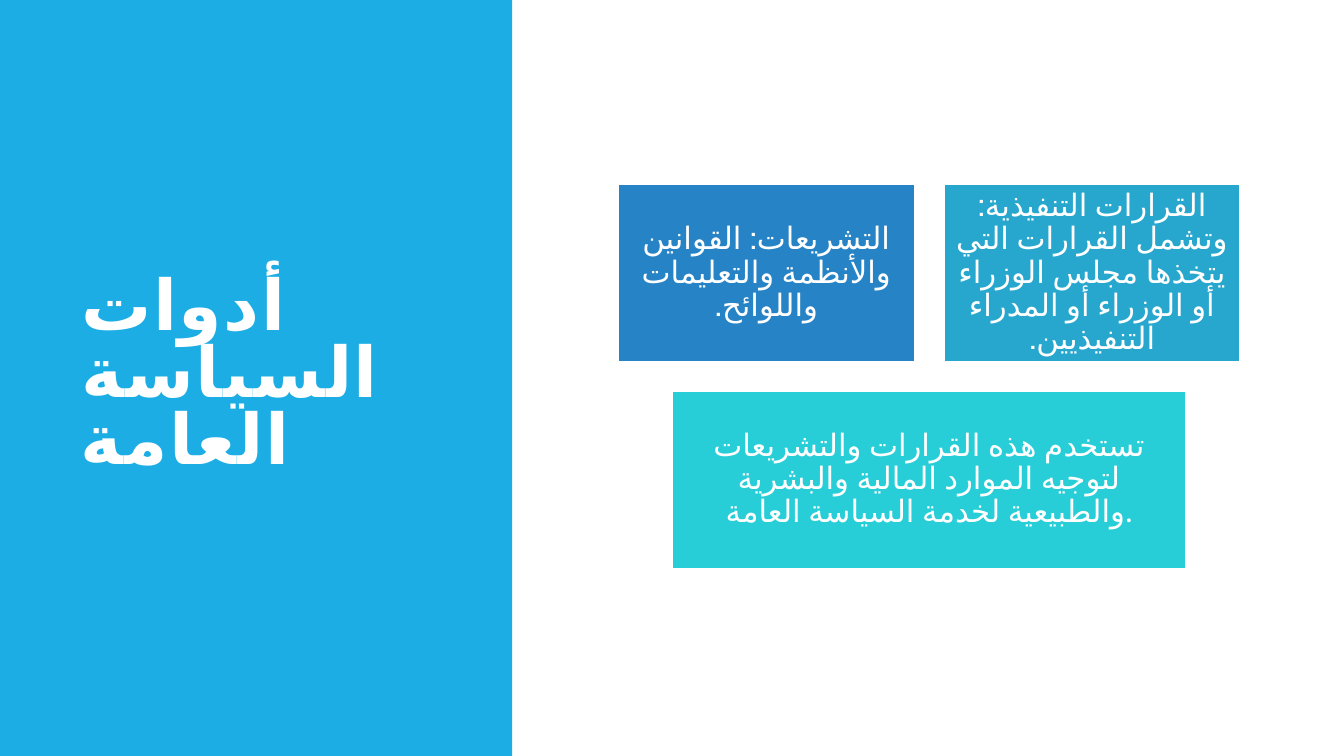
"""Build the slide on the tools of public policy."""
from pptx import Presentation
from pptx import util as u
from pptx.dml.color import RGBColor
from pptx.enum import lang, shapes, text

COLOURS = {"panel": "1CADE4", "legislation": "2683C6", "decisions": "27A7CE",
           "purpose": "27CED7", "white": "FFFFFF"}
FONT = "Lato"


def add_block(slide, left, top, width, height, colour):
    block = slide.shapes.add_shape(
        shapes.MSO_SHAPE.RECTANGLE, u.Inches(left), u.Inches(top),
        u.Inches(width), u.Inches(height))
    block.shadow.inherit = False
    block.fill.solid()
    block.fill.fore_color.rgb = RGBColor.from_string(COLOURS[colour])
    block.line.fill.background()
    return block


def write(frame, wording, size, spacing, align, rtl):
    frame.text = wording
    frame.word_wrap = True
    frame.vertical_anchor = text.MSO_ANCHOR.MIDDLE
    paragraph = frame.paragraphs[0]
    paragraph.alignment = align
    paragraph.line_spacing = spacing
    paragraph._p.get_or_add_pPr().set("rtl", "1" if rtl else "0")
    run = paragraph.runs[0]
    run.font.size = u.Pt(size)
    run.font.name = FONT
    run.font.language_id = lang.MSO_LANGUAGE_ID.ARABIC
    run.font.color.rgb = RGBColor.from_string(COLOURS["white"])
    return run


deck = Presentation()
deck.slide_width = u.Inches(13.33)
deck.slide_height = u.Inches(7.5)
slide = deck.slides.add_slide(deck.slide_layouts[6])

add_block(slide, 0, 0, 5.08, 7.5, "panel")
title = slide.shapes.add_textbox(
    u.Inches(0.7), u.Inches(0.7), u.Inches(3.74), u.Inches(6.09))
heading = write(title.text_frame, "أدوات السياسة العامة", 50, 0.8,
                text.PP_ALIGN.LEFT, True)
heading.font.bold = True
heading._r.get_or_add_rPr().set("spc", "100")

tools = [
    ("legislation", 6.13, 1.83, 2.94, True,
     "التشريعات: القوانين والأنظمة والتعليمات واللوائح."),
    ("decisions", 9.36, 1.83, 2.94, True,
     "القرارات التنفيذية: وتشمل القرارات التي يتخذها مجلس الوزراء أو الوزراء أو المدراء التنفيذيين."),
    ("purpose", 6.67, 3.88, 5.09, False,
     "تستخدم هذه القرارات والتشريعات لتوجيه الموارد المالية والبشرية والطبيعية لخدمة السياسة العامة."),
]
for colour, left, top, width, rtl, wording in tools:
    tool = add_block(slide, left, top, width, 1.76, colour)
    tool.line.color.rgb = RGBColor.from_string(COLOURS["white"])
    tool.line.width = u.Pt(1.25)
    frame = tool.text_frame
    frame.margin_left = frame.margin_right = u.Inches(0.09)
    frame.margin_top = frame.margin_bottom = u.Inches(0.09)
    write(frame, wording, 22, 0.9, text.PP_ALIGN.CENTER, rtl)

deck.save("out.pptx")
